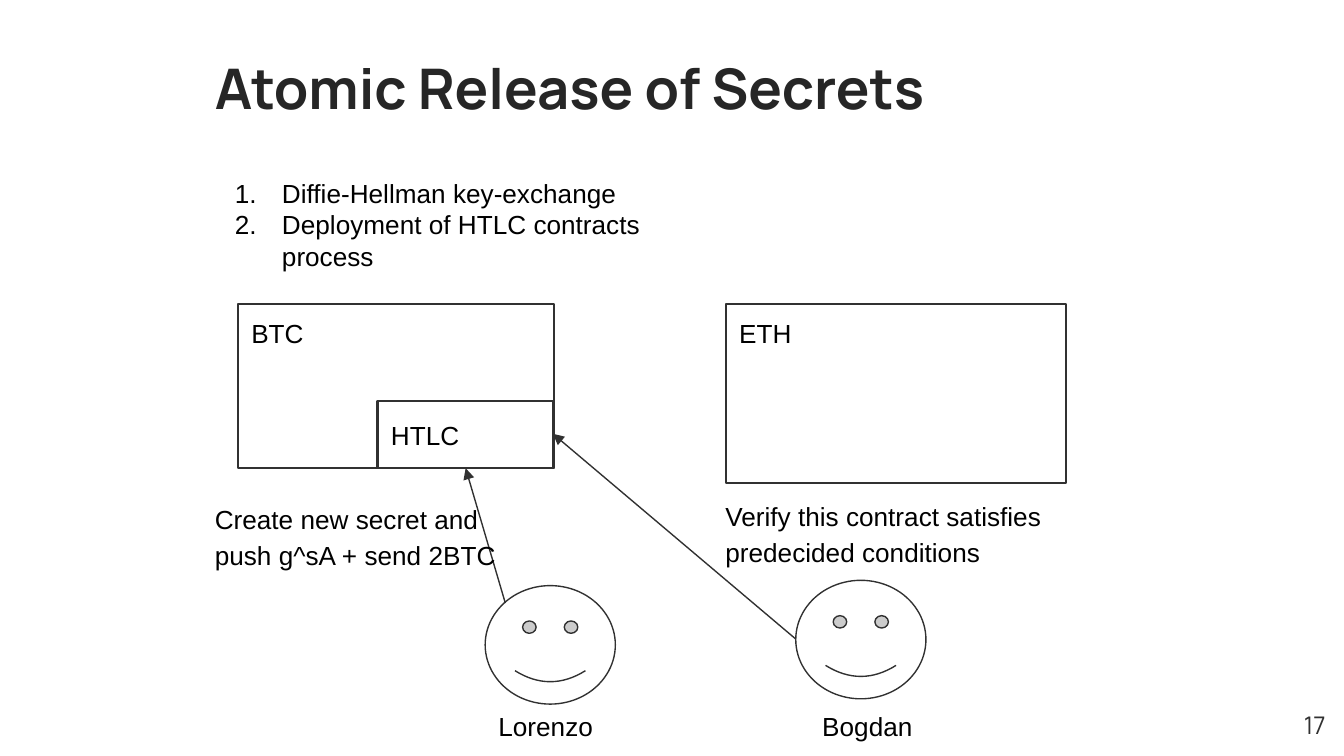
from lxml import etree
from pptx import Presentation
from pptx.dml.color import RGBColor
from pptx.enum.shapes import MSO_CONNECTOR, MSO_SHAPE
from pptx.enum.text import MSO_ANCHOR, PP_ALIGN
from pptx.oxml.ns import qn
from pptx.util import Cm, Pt

RECTANGLE = MSO_SHAPE.RECTANGLE
SMILEY = MSO_SHAPE.SMILEY_FACE
STRAIGHT = MSO_CONNECTOR.STRAIGHT
TOP, MIDDLE = MSO_ANCHOR.TOP, MSO_ANCHOR.MIDDLE
LEFT, RIGHT = PP_ALIGN.LEFT, PP_ALIGN.RIGHT

COLORS = {"white": "FFFFFF", "black": "000000", "title": "262626", "line": "313131"}
LABEL_HEIGHT = 1.12


def color(name):
    return RGBColor.from_string(COLORS[name])


def write_text(shape, lines, size=14, font="Arial", fill="black", bold=False,
               align=LEFT, anchor=TOP, spacing=1, numbered=False):
    text_frame = shape.text_frame
    text_frame.word_wrap = True
    text_frame.vertical_anchor = anchor
    text_frame.margin_left = text_frame.margin_right = Cm(0.25)
    text_frame.margin_top = text_frame.margin_bottom = Cm(0.25)
    text_frame.text = "\n".join(lines)
    for paragraph in text_frame.paragraphs:
        paragraph.alignment = align
        paragraph.line_spacing = spacing
        if numbered:
            add_number(paragraph)
        for run in paragraph.runs:
            run.font.size = Pt(size)
            run.font.name = font
            run.font.bold = bold
            run.font.color.rgb = color(fill)


def add_number(paragraph):
    properties = paragraph._p.get_or_add_pPr()
    properties.set("marL", str(Cm(1.27)))
    properties.set("indent", str(Cm(-0.89)))
    number = etree.SubElement(properties, qn("a:buAutoNum"))
    number.set("type", "arabicPeriod")


def add_text(slide, box, lines, **style):
    shape = slide.shapes.add_textbox(*map(Cm, box))
    write_text(shape, lines, **style)


def add_outline(slide, kind, box, width=0.75):
    shape = slide.shapes.add_shape(kind, *map(Cm, box))
    shape.shadow.inherit = False
    shape.fill.solid()
    shape.fill.fore_color.rgb = color("white")
    shape.line.color.rgb = color("line")
    shape.line.width = Pt(width)
    return shape


def add_chain(slide, box, name):
    left, top = box[:2]
    add_outline(slide, RECTANGLE, box)
    add_text(slide, (left, top, 1.53, LABEL_HEIGHT), [name])


def add_contract(slide, box):
    contract = add_outline(slide, RECTANGLE, box, 1.5)
    write_text(contract, ["HTLC"], anchor=MIDDLE)


def add_person(slide, box, name, label_left):
    face = add_outline(slide, SMILEY, box)
    face.adjustments[0] = 0.05
    add_text(slide, (label_left, 13.18, box[2], LABEL_HEIGHT), [name])


def add_arrow(slide, start, end):
    connector = slide.shapes.add_connector(STRAIGHT, *map(Cm, start + end))
    connector.line.color.rgb = color("line")
    connector.line.width = Pt(0.75)
    line = connector.line._get_or_add_ln()
    etree.SubElement(line, qn("a:tailEnd")).set("type", "triangle")
    etree.SubElement(connector._element.spPr, qn("a:effectLst"))


def add_heading(slide, box):
    add_text(slide, box, ["Atomic Release of Secrets"], size=30, font="Manrope",
             fill="title", bold=True, anchor=MIDDLE, spacing=1.15)


def add_steps(slide, box):
    add_text(slide, box, ["Diffie-Hellman key-exchange",
                          "Deployment of HTLC contracts process"], numbered=True)


def add_page_number(slide, box):
    add_text(slide, box, ["17"], size=13, font="Manrope", fill="line", align=RIGHT)


def main():
    presentation = Presentation()
    presentation.slide_width = Cm(25.4)
    presentation.slide_height = Cm(14.29)
    slide = presentation.slides.add_slide(presentation.slide_layouts[6])

    add_heading(slide, (3.81, 0, 15.72, 3.1))
    add_page_number(slide, (23.77, 13.18, 1.53, 1.09))
    add_steps(slide, (3.81, 3.1, 9.17, 5.31))
    add_chain(slide, (4.5, 5.75, 5.97, 3.1), "BTC")
    add_contract(slide, (7.14, 7.58, 3.33, 1.27))
    add_chain(slide, (13.72, 5.75, 6.43, 3.38), "ETH")
    add_person(slide, (9.17, 11.07, 2.46, 2.24), "Lorenzo", 9.17)
    add_arrow(slide, (9.55, 11.4), (8.8, 8.85))
    add_person(slide, (15.04, 10.97, 2.46, 2.24), "Bogdan", 15.29)
    add_text(slide, (3.81, 9.17, 5.85, 2.49),
             ["Create new secret and push g^sA + send 2BTC"], spacing=1.15)
    add_arrow(slide, (15.04, 12.08), (10.45, 8.2))
    add_text(slide, (13.46, 9.12, 8.9, 1.8),
             ["Verify this contract satisfies predecided conditions"], spacing=1.15)

    presentation.save("out.pptx")


if __name__ == "__main__":
    main()
